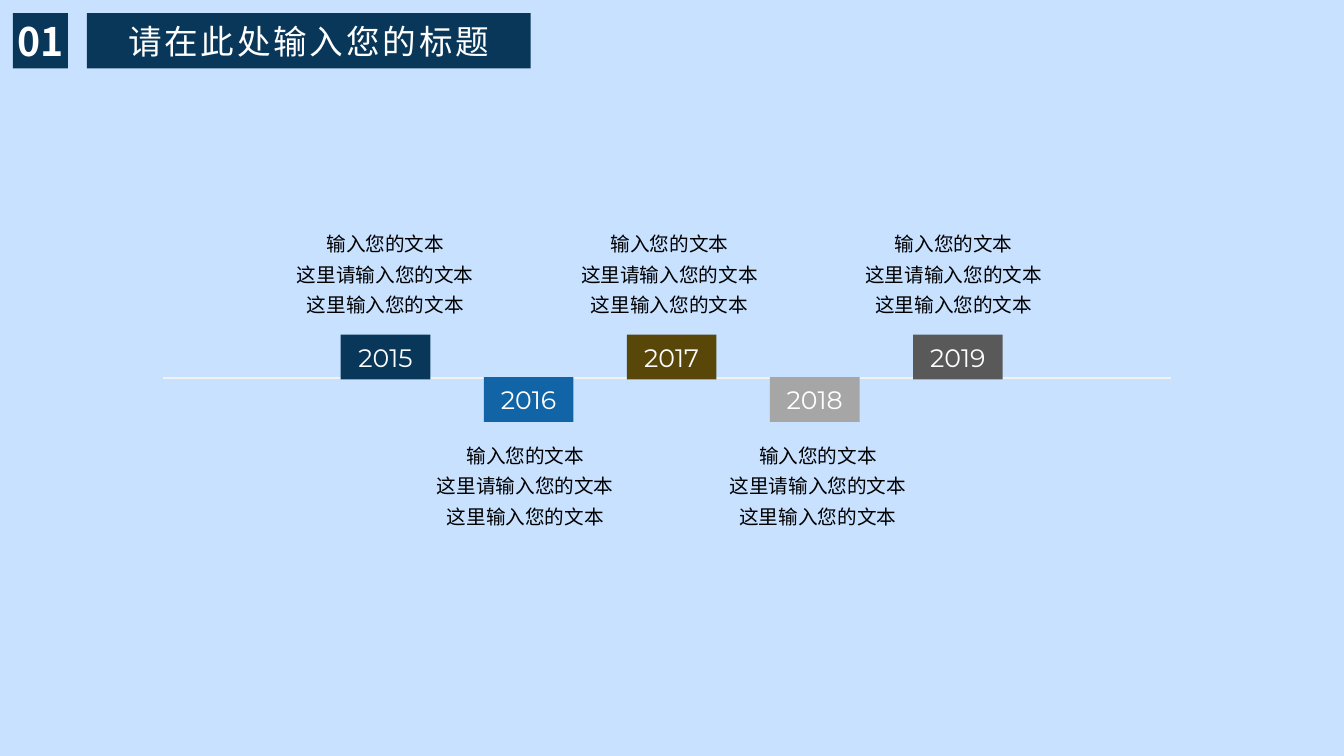
"""Build a five-year timeline slide."""
import pptx
import pptx.util
import pptx.dml.color
import pptx.enum.shapes
import pptx.enum.text
import pptx.oxml
import pptx.oxml.ns

Pt = pptx.util.Pt
ANCHOR = pptx.enum.text.MSO_ANCHOR
HAN = "Noto Sans CJK SC"
COLORS = {
    "sky": "C7E1FF", "navy": "093759", "blue": "1165A6", "olive": "594709",
    "silver": "A6A6A6", "gray": "595959", "pale": "F2F2F2",
    "white": "FFFFFF", "black": "000000",
}
YEARS = [("2015", "navy"), ("2016", "blue"), ("2017", "olive"),
         ("2018", "silver"), ("2019", "gray")]
BODY = "输入您的文本\n这里请输入您的文本\n这里输入您的文本"


def color(name):
    """Return the named colour."""
    return pptx.dml.color.RGBColor.from_string(COLORS[name])


def write(frame, text, size, font, ink, anchor, inset=True, bold=False, gap=0, lead=None):
    """Fill a text frame with centred, formatted paragraphs."""
    frame.word_wrap = True
    frame.vertical_anchor = anchor
    if not inset:
        frame.margin_left = frame.margin_right = Pt(0)
        frame.margin_top = frame.margin_bottom = Pt(0)
    frame.text = text
    for para in frame.paragraphs:
        para.alignment = pptx.enum.text.PP_ALIGN.CENTER
        para.line_spacing = lead
        for run in para.runs:
            run.font.size = Pt(size)
            run.font.name = font
            run.font.bold = bold
            run.font.color.rgb = color(ink)
            props = run.font._element
            east = pptx.oxml.parse_xml(f'<a:ea {pptx.oxml.ns.nsdecls("a")} typeface="{font}"/>')
            props.append(east)
            if gap:
                props.set("spc", str(gap * 100))


def add_box(slide, place, fill, text, size, font, **style):
    """Add a filled rectangle with white text."""
    kind = pptx.enum.shapes.MSO_SHAPE.RECTANGLE
    box = slide.shapes.add_shape(kind, *map(Pt, place))
    box.shadow.inherit = False
    box.fill.solid()
    box.fill.fore_color.rgb = color(fill)
    box.line.fill.background()
    write(box.text_frame, text, size, font, "white", ANCHOR.MIDDLE, **style)


def add_note(slide, left, top, anchor):
    """Add a three-line text block."""
    note = slide.shapes.add_textbox(Pt(left), Pt(top), Pt(134.6), Pt(65.5))
    write(note.text_frame, BODY, 14, HAN, "black", anchor, inset=False, lead=1.3)


def add_axis(slide, left, right, top):
    """Add the horizontal time line."""
    kind = pptx.enum.shapes.MSO_CONNECTOR.STRAIGHT
    axis = slide.shapes.add_connector(kind, Pt(left), Pt(top), Pt(right), Pt(top))
    axis.line.color.rgb = color("pale")
    axis.line.width = Pt(1.75)
    blank = pptx.oxml.parse_xml(f'<a:effectLst {pptx.oxml.ns.nsdecls("a")}/>')
    axis._element.spPr.append(blank)


def main():
    """Build and save the slide."""
    deck = pptx.Presentation()
    deck.slide_width, deck.slide_height = Pt(960), Pt(540)
    slide = deck.slides.add_slide(deck.slide_layouts[6])
    slide.background.fill.solid()
    slide.background.fill.fore_color.rgb = color("sky")

    add_axis(slide, 116.6, 836.6, 270)
    for i, (year, fill) in enumerate(YEARS):
        top = 269.3 if i % 2 else 239
        add_box(slide, (243.4 + 102.2 * i, top, 64, 32), fill, year, 18, "Montserrat")
    for i in range(3):
        add_note(slide, 208 + 203 * i, 160.6, ANCHOR.BOTTOM)
    for i in range(2):
        add_note(slide, 308 + 209 * i, 311.8, ANCHOR.TOP)

    add_box(slide, (9.2, 9.4, 39.4, 39.4), "navy", "01", 28, HAN, inset=False, bold=True)
    add_box(slide, (62, 9.4, 317, 39.4), "navy", "请在此处输入您的标题", 24, HAN, gap=2)
    deck.save("out.pptx")


if __name__ == "__main__":
    main()
